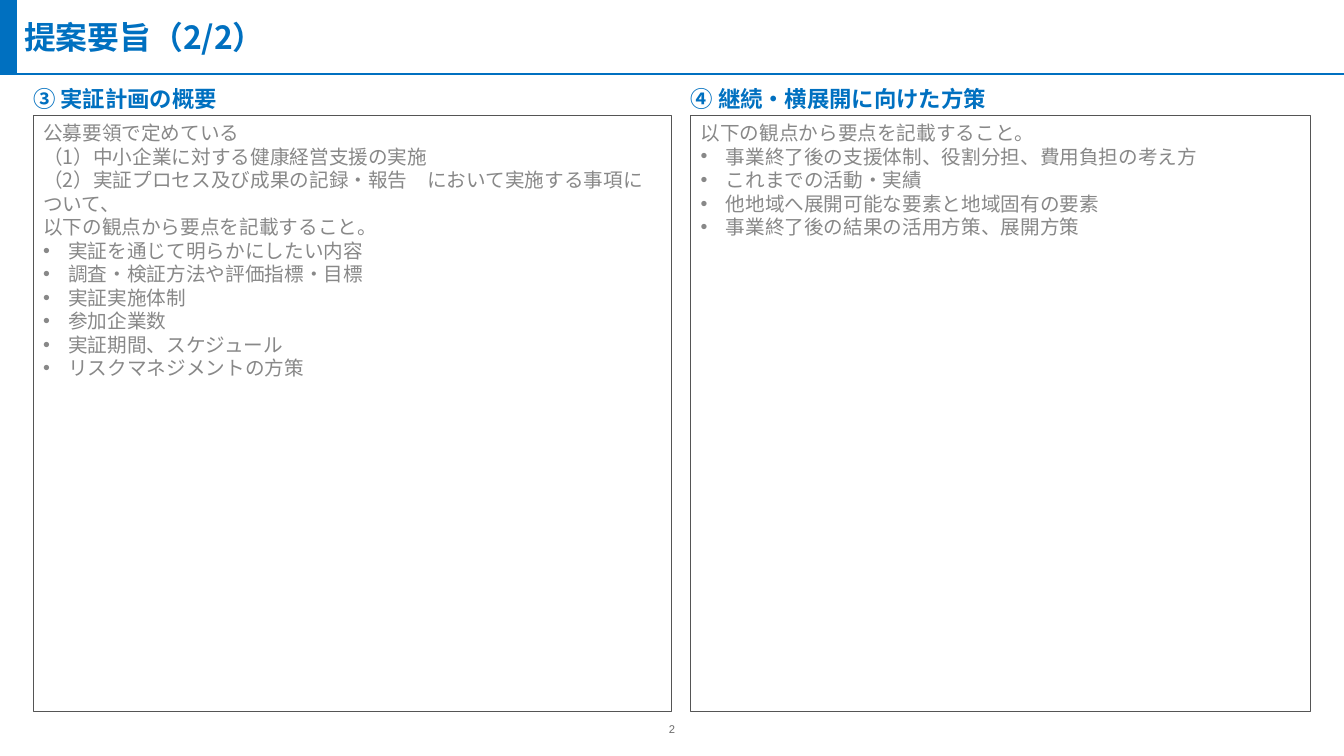
from pptx import Presentation
from pptx.dml.color import RGBColor
from pptx.enum import shapes, text
from pptx.oxml.ns import qn
from pptx.util import Inches, Pt
from lxml import etree

# Content
TITLE = "提案要旨（2/2）"
PAGE = "2"
PANELS = [
    {"left": 0.33, "width": 6.33, "head": "③ 実証計画の概要",
     "lead": ["公募要領で定めている",
              "（1）中小企業に対する健康経営支援の実施",
              "（2）実証プロセス及び成果の記録・報告　において実施する事項について、",
              "以下の観点から要点を記載すること。"],
     "items": ["実証を通じて明らかにしたい内容", "調査・検証方法や評価指標・目標",
               "実証実施体制", "参加企業数", "実証期間、スケジュール",
               "リスクマネジメントの方策"]},
    {"left": 6.85, "width": 6.15, "head": "④ 継続・横展開に向けた方策",
     "lead": ["以下の観点から要点を記載すること。"],
     "items": ["事業終了後の支援体制、役割分担、費用負担の考え方",
               "これまでの活動・実績", "他地域へ展開可能な要素と地域固有の要素",
               "事業終了後の結果の活用方策、展開方策"]},
]

# Formats
COLORS = {"blue": "0070C0", "white": "FFFFFF", "edge": "555555",
          "hint": "888888", "page": "6B6B6B"}
SANS = "Noto Sans CJK JP"
STYLES = {
    "title": ("blue", {"name": SANS, "size": Pt(22.7), "bold": True}),
    "head": ("blue", {"name": SANS, "size": Pt(16), "bold": True}),
    "body": ("hint", {"name": SANS, "size": Pt(14), "bold": False}),
    "page": ("page", {"name": "Arial", "size": Pt(8), "bold": False}),
}
WIDE, TALL, BAR = 13.33, 7.5, 0.73
INDENT = Inches(0.25)


def color(key):
    return RGBColor.from_string(COLORS[key])


def write(para, words, style):
    run = para.add_run()
    run.text = words
    key, values = STYLES[style]
    for name, value in values.items():
        setattr(run.font, name, value)
    run.font.color.rgb = color(key)
    east = etree.SubElement(run.font._element, qn("a:ea"))
    east.set("typeface", values["name"])


def label(shape, words, style, align=text.PP_ALIGN.LEFT):
    frame = shape.text_frame
    flat = {"margin_left": 0, "margin_right": 0, "margin_top": 0,
            "margin_bottom": 0, "word_wrap": True,
            "auto_size": text.MSO_AUTO_SIZE.NONE,
            "vertical_anchor": text.MSO_ANCHOR.MIDDLE}
    for name, value in flat.items():
        setattr(frame, name, value)
    para = frame.paragraphs[0]
    para.alignment = align
    write(para, words, style)


def box(place, fill, edge, weight):
    shape = slide.shapes.add_shape(shapes.MSO_SHAPE.RECTANGLE, *map(Inches, place))
    shape.shadow.inherit = False
    shape.fill.solid()
    shape.fill.fore_color.rgb = color(fill)
    shape.line.color.rgb = color(edge)
    shape.line.width = Pt(weight)
    return shape


def bullet(para):
    props = para._p.get_or_add_pPr()
    props.set("marL", str(INDENT))
    props.set("indent", str(-INDENT))
    etree.SubElement(props, qn("a:buFont")).set("typeface", "Arial")
    etree.SubElement(props, qn("a:buChar")).set("char", "•")


deck = Presentation()
deck.slide_width, deck.slide_height = Inches(WIDE), Inches(TALL)
slide = deck.slides.add_slide(deck.slide_layouts[5])

# Title band
box((0, 0, 0.16, BAR), "blue", "blue", 1)
title = slide.shapes.title
for side, value in zip(("left", "top", "width", "height"), (0.24, 0.04, 12.67, 0.64)):
    setattr(title, side, Inches(value))
label(title, TITLE, "title")
rule = slide.shapes.add_connector(shapes.MSO_CONNECTOR.STRAIGHT,
                                  0, Inches(BAR), Inches(WIDE), Inches(BAR))
rule.line.color.rgb = color("blue")
rule.line.width = Pt(1.5)
etree.SubElement(rule._element.spPr, qn("a:effectLst"))

# Panels
for panel in PANELS:
    left = panel["left"]
    head = slide.shapes.add_textbox(*map(Inches, (left, 0.83, 6.15, 0.29)))
    label(head, panel["head"], "head")

    frame = box((left, 1.15, panel["width"], 5.91), "white", "edge", 0.75).text_frame
    frame.word_wrap = True
    frame.vertical_anchor = text.MSO_ANCHOR.TOP
    lines = panel["lead"] + panel["items"]
    for i, words in enumerate(lines):
        para = frame.add_paragraph() if i else frame.paragraphs[0]
        para.alignment = text.PP_ALIGN.LEFT
        para.line_spacing = Pt(16.8)
        if i >= len(panel["lead"]):
            bullet(para)
        write(para, words, "body")

# Page number
page = slide.shapes.add_textbox(*map(Inches, (6.5, 7.18, 0.33, 0.1)))
label(page, PAGE, "page", text.PP_ALIGN.CENTER)

deck.save("out.pptx")
